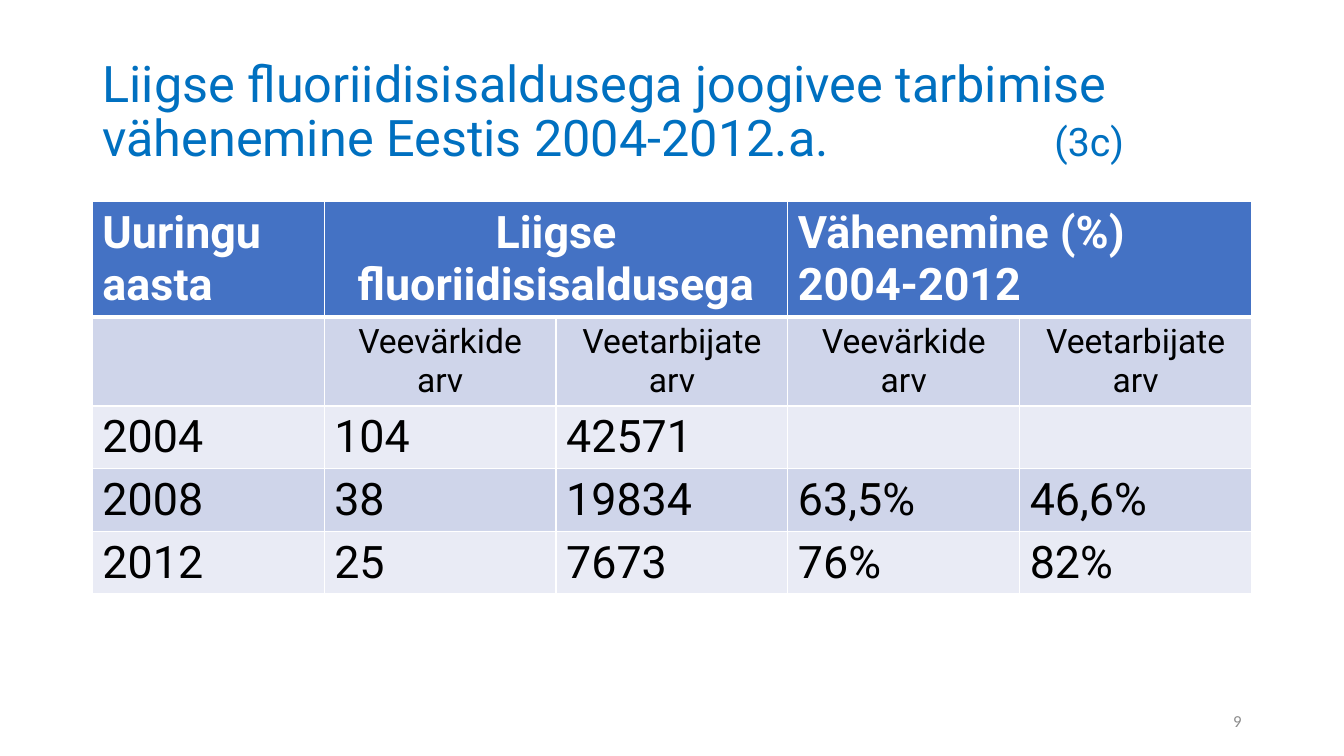
from lxml import etree
from pptx import Presentation
from pptx.dml.color import RGBColor
from pptx.enum.text import MSO_ANCHOR, PP_ALIGN
from pptx.oxml.ns import qn
from pptx.util import Pt

LEFT, CENTER, RIGHT = PP_ALIGN.LEFT, PP_ALIGN.CENTER, PP_ALIGN.RIGHT
MIDDLE = MSO_ANCHOR.MIDDLE
COLORS = {
    "title": "0070C0",
    "header": "4472C4",
    "dark_band": "CFD5EA",
    "light_band": "E9EBF5",
    "white": "FFFFFF",
    "black": "000000",
    "number": "8C8C8C",
}


def add_text(paragraph, text, size, color="black", font="Roboto", bold=False, align=LEFT):
    paragraph.alignment = align
    run = paragraph.add_run()
    run.text = text
    run.font.name = font
    run.font.size = Pt(size)
    run.font.bold = bold
    run.font.color.rgb = RGBColor.from_string(COLORS[color])


def add_border(cell, side, width):
    """Draw a white line on one side (L, R, T or B) of a cell."""
    line = etree.SubElement(cell._tc.get_or_add_tcPr(), qn(f"a:ln{side}"), w=str(Pt(width)))
    fill = etree.SubElement(line, qn("a:solidFill"))
    etree.SubElement(fill, qn("a:srgbClr"), val=COLORS["white"])


presentation = Presentation()
presentation.slide_width = Pt(960)
presentation.slide_height = Pt(540)
slide = presentation.slides.add_slide(presentation.slide_layouts[5])

# Title, with the section mark placed by a tab stop
title = slide.shapes.title
title.left, title.top, title.width, title.height = Pt(66), Pt(28.75), Pt(828), Pt(104.4)
title.text_frame.word_wrap = True
title.text_frame.vertical_anchor = MIDDLE
heading = title.text_frame.paragraphs[0]
heading.line_spacing = 0.9
add_text(heading, "Liigse fluoriidisisaldusega joogivee tarbimise vähenemine Eestis 2004-2012.a.\t",
         36, color="title")
add_text(heading, "(3c)", 28, color="title")
tab_list = etree.SubElement(heading._p.get_or_add_pPr(), qn("a:tabLst"))
etree.SubElement(tab_list, qn("a:tab"), pos=str(Pt(680)), algn="l")

# Table
rows = [
    ["Uuringu aasta", "Liigse fluoriidisisaldusega", "", "Vähenemine (%) 2004-2012", ""],
    ["", "Veevärkide arv", "Veetarbijate arv", "Veevärkide arv", "Veetarbijate arv"],
    ["2004", "104", "42571", "", ""],
    ["2008", "38", "19834", "63,5%", "46,6%"],
    ["2012", "25", "7673", "76%", "82%"],
]
row_heights = [81.5, 63.5, 44.7, 44.7, 44.7]
table = slide.shapes.add_table(
    len(rows), len(rows[0]), Pt(66), Pt(144), Pt(828), Pt(sum(row_heights))).table
for column in table.columns:
    column.width = Pt(165.6)
for row, height in zip(table.rows, row_heights):
    row.height = Pt(height)
for first in (1, 3):
    table.cell(0, first).merge(table.cell(0, first + 1))

for row_index, values in enumerate(rows):
    is_header, is_subheader = row_index == 0, row_index == 1
    band = "header" if is_header else "dark_band" if row_index % 2 else "light_band"
    for column_index, value in enumerate(values):
        cell = table.cell(row_index, column_index)
        for side in "LRTB":
            thick = (is_header and side == "B") or (is_subheader and side == "T")
            add_border(cell, side, 3 if thick else 1)
        cell.fill.solid()
        cell.fill.fore_color.rgb = RGBColor.from_string(COLORS[band])
        if value:
            centered = is_subheader or (is_header and column_index == 1)
            add_text(cell.text_frame.paragraphs[0], value, 24 if is_subheader else 32,
                     color="white" if is_header else "black", bold=is_header,
                     align=CENTER if centered else LEFT)

# Slide number
number_box = slide.shapes.add_textbox(Pt(678), Pt(500.5), Pt(216), Pt(28.75))
number_box.text_frame.word_wrap = True
number_box.text_frame.vertical_anchor = MIDDLE
add_text(number_box.text_frame.paragraphs[0], "9", 12, color="number", font="Calibri", align=RIGHT)

presentation.save("out.pptx")
